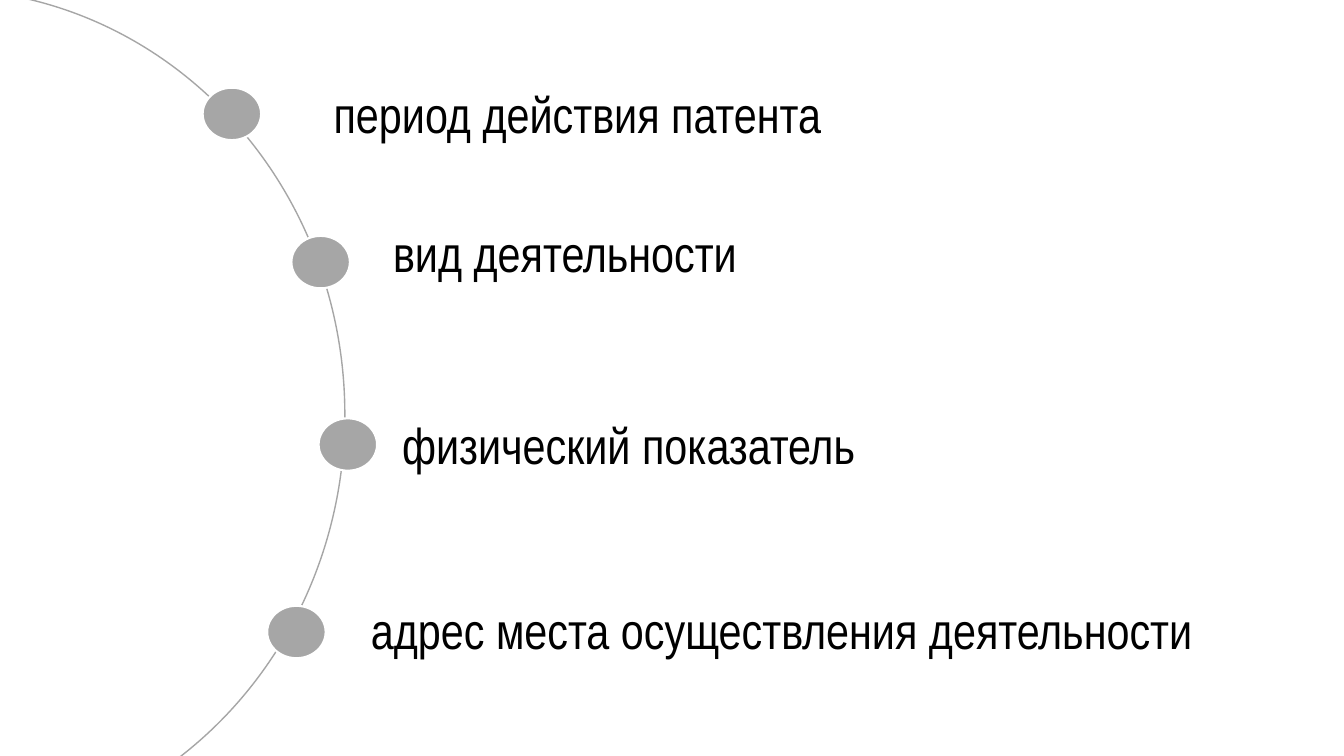
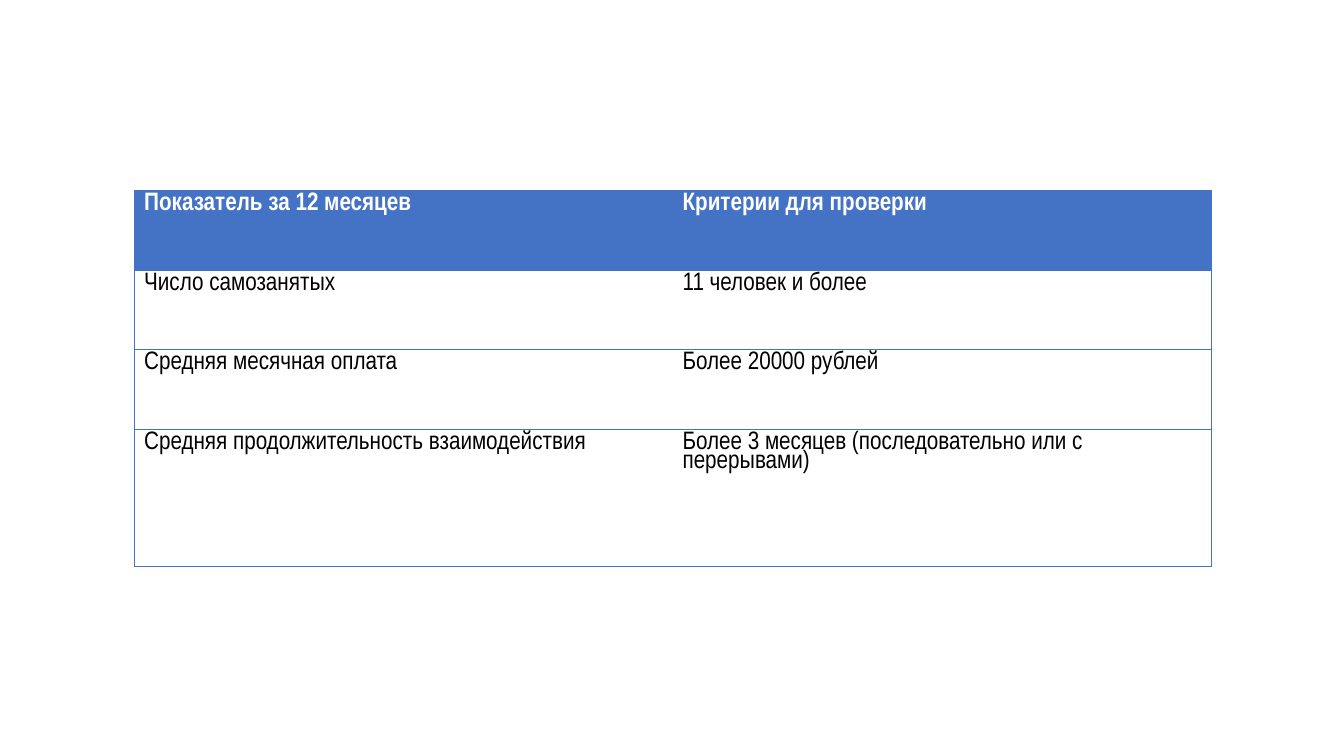
from dataclasses import dataclass
from lxml.etree import SubElement
from pptx import Presentation
from pptx.dml.color import RGBColor
from pptx.enum.shapes import MSO_SHAPE
from pptx.enum.text import MSO_AUTO_SIZE
from pptx.oxml.ns import qn
from pptx.util import Inches, Pt


@dataclass(frozen=True)
class Theme:
    font: str = "Arial Narrow"
    text: str = "000000"
    white: str = "FFFFFF"
    gray: str = "A6A6A6"
    blue: str = "4472C4"
    label_size: float = 36
    table_size: float = 18
    arc_line: float = 1
    dot_line: float = 1.5
    border: float = 0.5
    cell_spacing: float = 0.8


THEME = Theme()

# Content: label, its (left, top, width), and the (left, top) of its dot
ITEMS = [
    ("период действия патента", (3.21, 0.78, 5.11), (2.01, 0.87)),
    ("вид деятельности", (3.8, 2.15, 3.67), (2.89, 2.34)),
    ("физический показатель", (3.89, 4.06, 4.76), (3.16, 4.15)),
    ("адрес места осуществления деятельности", (3.58, 5.89, 8.47), (2.65, 6.01)),
]
ARC = (-4.61, -0.11, 8.03, 8.44)
DOT_SIZE = (0.58, 0.52)
LABEL_HEIGHT = 0.71

CRITERIA = [
    ("Показатель за 12 месяцев", "Критерии для проверки"),
    ("Число самозанятых", "11 человек и более"),
    ("Средняя месячная оплата", "Более 20000 рублей"),
    ("Средняя продолжительность взаимодействия",
     "Более 3 месяцев (последовательно или с перерывами)"),
]
TABLE_ORIGIN = (1.33, 1.89)
COL_WIDTH = 5.34
ROW_HEIGHTS = [0.79, 0.79, 0.79, 1.36]


# Helpers
def rgb(color):
    return RGBColor.from_string(color)


def add_run(p, text, size, color, bold=False):
    r = p.add_run()
    r.text = text
    r.font.name = THEME.font
    r.font.size = Pt(size)
    r.font.bold = bold
    r.font.color.rgb = rgb(color)


def add_ellipse(slide, box, line, width, fill=None):
    sp = slide.shapes.add_shape(MSO_SHAPE.OVAL, *map(Inches, box))
    sp.shadow.inherit = False
    if fill:
        sp.fill.solid()
        sp.fill.fore_color.rgb = rgb(fill)
    else:
        sp.fill.background()
    sp.line.color.rgb = rgb(line)
    sp.line.width = Pt(width)


def add_label(slide, text, left, top, width):
    sp = slide.shapes.add_textbox(*map(Inches, (left, top, width, LABEL_HEIGHT)))
    tf = sp.text_frame
    tf.word_wrap = False
    tf.auto_size = MSO_AUTO_SIZE.SHAPE_TO_FIT_TEXT
    add_run(tf.paragraphs[0], text, THEME.label_size, THEME.text)


def set_borders(cell, visible):
    """Draw the sides named in visible and hide the others."""
    tcPr = cell._tc.get_or_add_tcPr()
    for i, side in enumerate("LRTB"):
        ln = SubElement(tcPr, qn(f"a:ln{side}"), w=str(Pt(THEME.border)))
        tcPr.insert(i, ln)
        if side in visible:
            fill = SubElement(ln, qn("a:solidFill"))
            SubElement(fill, qn("a:srgbClr"), val=THEME.blue)
        else:
            SubElement(ln, qn("a:noFill"))


# Slides
def build_arc_slide(slide):
    add_ellipse(slide, ARC, THEME.gray, THEME.arc_line)
    for text, label, dot in ITEMS:
        add_ellipse(slide, dot + DOT_SIZE, THEME.white, THEME.dot_line, THEME.gray)
        add_label(slide, text, *label)


def build_table_slide(slide):
    cols = len(CRITERIA[0])
    size = (COL_WIDTH * cols, sum(ROW_HEIGHTS))
    table = slide.shapes.add_table(
        len(CRITERIA), cols, *map(Inches, TABLE_ORIGIN + size)).table
    table.horz_banding = False
    for col in table.columns:
        col.width = Inches(COL_WIDTH)
    for i, (texts, height) in enumerate(zip(CRITERIA, ROW_HEIGHTS)):
        table.rows[i].height = Inches(height)
        header = i == 0
        for j, text in enumerate(texts):
            cell = table.cell(i, j)
            if header:
                cell.fill.solid()
                cell.fill.fore_color.rgb = rgb(THEME.blue)
            else:
                cell.fill.background()
            set_borders(cell, "TB" + ("L" if j == 0 else "") + ("R" if j == cols - 1 else ""))
            p = cell.text_frame.paragraphs[0]
            p.line_spacing = THEME.cell_spacing
            add_run(p, text, THEME.table_size, THEME.white if header else THEME.text, header)


def main():
    prs = Presentation()
    prs.slide_width, prs.slide_height = Inches(13.33), Inches(7.5)
    for build in (build_arc_slide, build_table_slide):
        build(prs.slides.add_slide(prs.slide_layouts[6]))
    prs.save("out.pptx")


if __name__ == "__main__":
    main()
